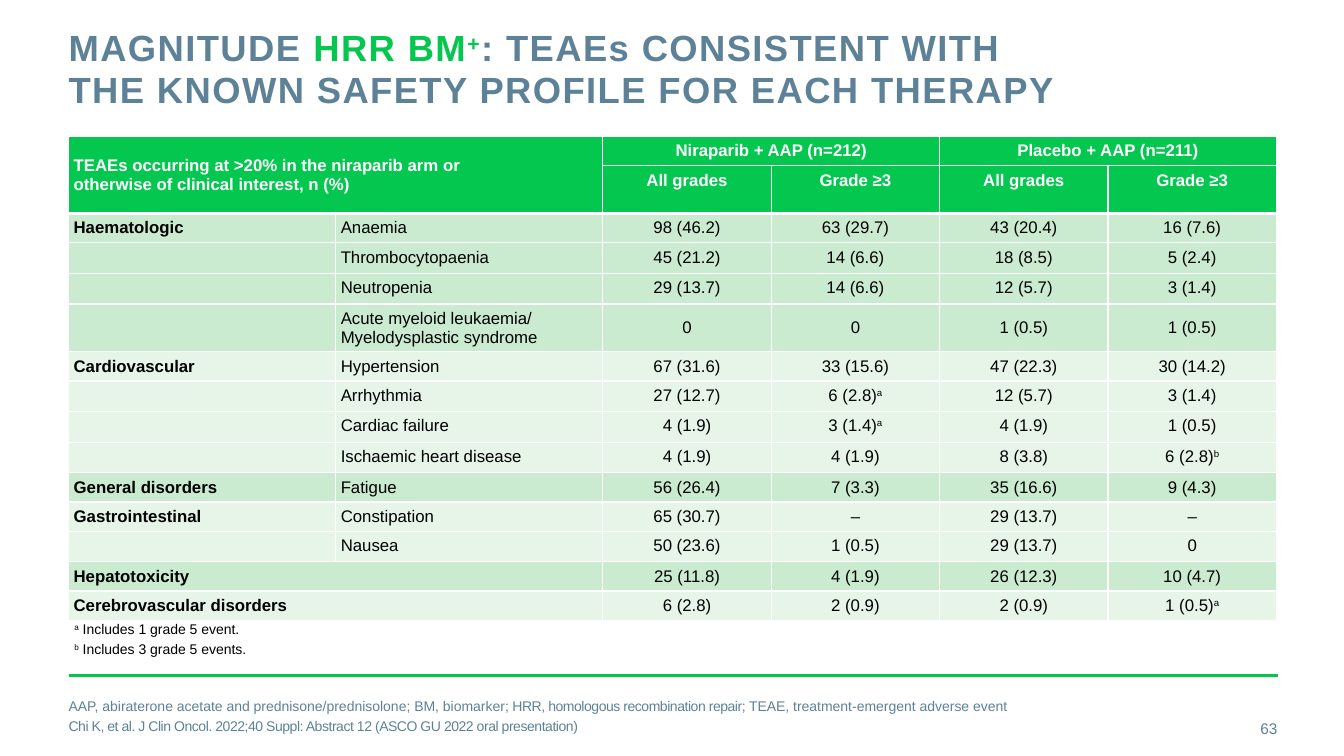
from pptx import Presentation
from pptx.dml.color import RGBColor
from pptx.enum import shapes, text
from pptx.oxml.ns import qn
from pptx.util import Pt
from lxml import etree

# Content: "^" marks a one-letter superscript
GREEN, SLATE, WHITE, BLACK = "03C74F", "5D8298", "FFFFFF", "000000"
DARK_BAND, LIGHT_BAND = "CBEBD0", "E7F5E9"
FONT = "Arial"

TITLE = [("MAGNITUDE ", SLATE), ("HRR BM^+", GREEN),
         (": TEAEs CONSISTENT WITH THE KNOWN SAFETY PROFILE FOR EACH THERAPY", SLATE)]
HEADING = ["TEAEs occurring at >20% in the niraparib arm or ",
           "otherwise of clinical interest, n (%)"]
ARMS = ["Niraparib + AAP (n=212)", "Placebo + AAP (n=211)"]
GRADES = ["All grades", "Grade ≥3"]
GROUPS = [
    ("Haematologic", [
        ("Anaemia", "98 (46.2)", "63 (29.7)", "43 (20.4)", "16 (7.6)"),
        ("Thrombocytopaenia", "45 (21.2)", "14 (6.6)", "18 (8.5)", "5 (2.4)"),
        ("Neutropenia", "29 (13.7)", "14 (6.6)", "12 (5.7)", "3 (1.4)"),
        ("Acute myeloid leukaemia/\nMyelodysplastic syndrome", "0", "0", "1 (0.5)", "1 (0.5)")]),
    ("Cardiovascular", [
        ("Hypertension", "67 (31.6)", "33 (15.6)", "47 (22.3)", "30 (14.2)"),
        ("Arrhythmia", "27 (12.7)", "6 (2.8)^a", "12 (5.7)", "3 (1.4)"),
        ("Cardiac failure", "4 (1.9)", "3 (1.4)^a", "4 (1.9)", "1 (0.5)"),
        ("Ischaemic heart disease", "4 (1.9)", "4 (1.9)", "8 (3.8)", "6 (2.8)^b")]),
    ("General disorders", [("Fatigue", "56 (26.4)", "7 (3.3)", "35 (16.6)", "9 (4.3)")]),
    ("Gastrointestinal", [
        ("Constipation", "65 (30.7)", "–", "29 (13.7)", "–"),
        ("Nausea", "50 (23.6)", "1 (0.5)", "29 (13.7)", "0")]),
    ("Hepatotoxicity", [("", "25 (11.8)", "4 (1.9)", "26 (12.3)", "10 (4.7)")]),
    ("Cerebrovascular disorders", [("", "6 (2.8)", "2 (0.9)", "2 (0.9)", "1 (0.5)^a")]),
]
NOTES = ["^a Includes 1 grade 5 event.", "^b Includes 3 grade 5 events."]
ABBREVIATIONS = [
    ("AAP, abiraterone acetate and prednisone/prednisolone; BM, biomarker; ", 0),
    ("HRR, homologous recombination repair; ", -0.3),
    ("TEAE, treatment-emergent adverse event", 0)]
CITATION = [("Chi K, et al. J Clin Oncol. 2022;40 Suppl: Abstract 12 "
             "(ASCO GU 2022 oral presentation)", -0.3)]
PAGE = "63"

# Layout
LEFT = 49
LABEL_WIDTH, VALUE_WIDTH = 190.8, 120.3
ROW_HEIGHT, TALL_ROW_HEIGHT = 20.9, 33.8
CELL_MARGIN = 3.6
CENTER, RIGHT = text.PP_ALIGN.CENTER, text.PP_ALIGN.RIGHT
MIDDLE, TOP = text.MSO_ANCHOR.MIDDLE, text.MSO_ANCHOR.TOP


def rgb(value):
    return RGBColor.from_string(value)


def style(paragraph, size, color=None, bold=False, align=None):
    paragraph.alignment = align
    font = paragraph.font
    font.name, font.size, font.bold = FONT, Pt(size), bold
    if color:
        font.color.rgb = rgb(color)


def write(paragraph, content, color=None, spacing=0):
    """Add runs; the letter after each "^" is raised."""
    first, *raised = content.split("^")
    pieces = [(first, 0)]
    for part in raised:
        pieces += [(part[:1], 30), (part[1:], 0)]
    for piece, baseline in pieces:
        if not piece:
            continue
        run = paragraph.add_run()
        run.text = piece
        if color:
            run.font.color.rgb = rgb(color)
        properties = run.font._element
        if baseline:
            properties.set("baseline", f"{baseline * 1000}")
        if spacing:
            properties.set("spc", f"{spacing * 100:.0f}")


def add_box(left, top, width, height, anchor=TOP, margins=(0, 0)):
    box = slide.shapes.add_textbox(Pt(left), Pt(top), Pt(width), Pt(height))
    frame = box.text_frame
    frame.word_wrap, frame.vertical_anchor = True, anchor
    frame.margin_left = frame.margin_right = Pt(margins[0])
    frame.margin_top = frame.margin_bottom = Pt(margins[1])
    return frame


def next_paragraph(frame, index):
    if index == 0:
        return frame.paragraphs[0]
    return frame.add_paragraph()


def format_cell(cell, fill, top=1, bottom=1):
    """Set margins, white borders and fill."""
    cell.margin_left = cell.margin_right = Pt(CELL_MARGIN)
    cell.margin_top = cell.margin_bottom = Pt(CELL_MARGIN)
    properties = cell._tc.get_or_add_tcPr()
    for side, width in (("L", 1), ("R", 1), ("T", top), ("B", bottom)):
        line = etree.SubElement(properties, qn(f"a:ln{side}"), w=str(Pt(width)))
        solid = etree.SubElement(line, qn("a:solidFill"))
        etree.SubElement(solid, qn("a:srgbClr"), val=WHITE)
    cell.fill.solid()
    cell.fill.fore_color.rgb = rgb(fill)
    # An empty cell takes its line height from the paragraph end
    end = cell.text_frame.paragraphs[0]._p.get_or_add_endParaRPr()
    end.set("sz", "1200")


def write_cell(cell, content, color=BLACK, bold=False, align=None, anchor=TOP):
    cell.vertical_anchor = anchor
    for index, line in enumerate(content.split("\n")):
        paragraph = next_paragraph(cell.text_frame, index)
        style(paragraph, 12, color, bold, align)
        write(paragraph, line)


presentation = Presentation()
presentation.slide_width, presentation.slide_height = Pt(960), Pt(540)
slide = presentation.slides.add_slide(presentation.slide_layouts[6])

# Footer rule
rule = slide.shapes.add_connector(shapes.MSO_CONNECTOR.STRAIGHT,
                                  Pt(LEFT), Pt(482.5), Pt(913), Pt(482.5))
rule.line.color.rgb, rule.line.width = rgb(GREEN), Pt(2)
etree.SubElement(rule._element.spPr, qn("a:effectLst"))

# Table grid
rows = [(name if index == 0 else "", event, band)
        for band, (name, events) in enumerate(GROUPS)
        for index, event in enumerate(events)]
widths = [LABEL_WIDTH] * 2 + [VALUE_WIDTH] * 4
heights = [ROW_HEIGHT, TALL_ROW_HEIGHT] + [
    TALL_ROW_HEIGHT if "\n" in event[0] else ROW_HEIGHT for _, event, _ in rows]
table = slide.shapes.add_table(len(heights), len(widths), Pt(LEFT), Pt(97.5),
                               Pt(sum(widths)), Pt(sum(heights))).table
table.first_row = table.horz_banding = False
for column, width in zip(table.columns, widths):
    column.width = Pt(width)
for row, height in zip(table.rows, heights):
    row.height = Pt(height)

# Table header
for column in range(len(widths)):
    format_cell(table.cell(0, column), GREEN, bottom=3 if column < 2 else 1)
    format_cell(table.cell(1, column), GREEN, bottom=3)
heading = table.cell(0, 0)
heading.merge(table.cell(1, 1))
heading.vertical_anchor = MIDDLE
paragraph = heading.text_frame.paragraphs[0]
style(paragraph, 12, WHITE, True)
write(paragraph, HEADING[0])
paragraph.add_line_break()
write(paragraph, HEADING[1])
for arm, label in enumerate(ARMS):
    column = 2 + 2 * arm
    table.cell(0, column).merge(table.cell(0, column + 1))
    write_cell(table.cell(0, column), label, WHITE, True, CENTER)
    for offset, grade in enumerate(GRADES):
        write_cell(table.cell(1, column + offset), grade, WHITE, True, CENTER)

# Table body
for number, (name, (event, *values), band) in enumerate(rows, start=2):
    for column in range(len(widths)):
        format_cell(table.cell(number, column), LIGHT_BAND if band % 2 else DARK_BAND,
                    top=3 if number == 2 else 1)
    if name:
        write_cell(table.cell(number, 0), name, bold=True)
    if event:
        write_cell(table.cell(number, 1), event)
    else:
        table.cell(number, 0).merge(table.cell(number, 1))
    for column, value in enumerate(values, start=2):
        write_cell(table.cell(number, column), value, align=CENTER,
                   anchor=MIDDLE if "\n" in event else TOP)

# Title
paragraph = add_box(LEFT, 19.5, 709, 63.5).paragraphs[0]
paragraph.line_spacing = Pt(30)
style(paragraph, 26, bold=True)
for content, color in TITLE:
    write(paragraph, content, color, spacing=1)

# Page number
paragraph = add_box(850.5, 506, 62, 29, MIDDLE).paragraphs[0]
style(paragraph, 11, SLATE, align=RIGHT)
write(paragraph, PAGE)

# Abbreviations and citation, then table footnotes
footer = add_box(LEFT, 497, 822, 29, MIDDLE)
footnotes = add_box(46, 440, 910, 45, margins=(7.2, 3.6))
for frame, color, lines in ((footer, SLATE, [ABBREVIATIONS, CITATION]),
                            (footnotes, BLACK, [[(note, 0)] for note in NOTES])):
    for index, line in enumerate(lines):
        paragraph = next_paragraph(frame, index)
        paragraph.space_before = Pt(2 if index else 0)
        style(paragraph, 10, color)
        for content, spacing in line:
            write(paragraph, content, spacing=spacing)

presentation.save("out.pptx")
